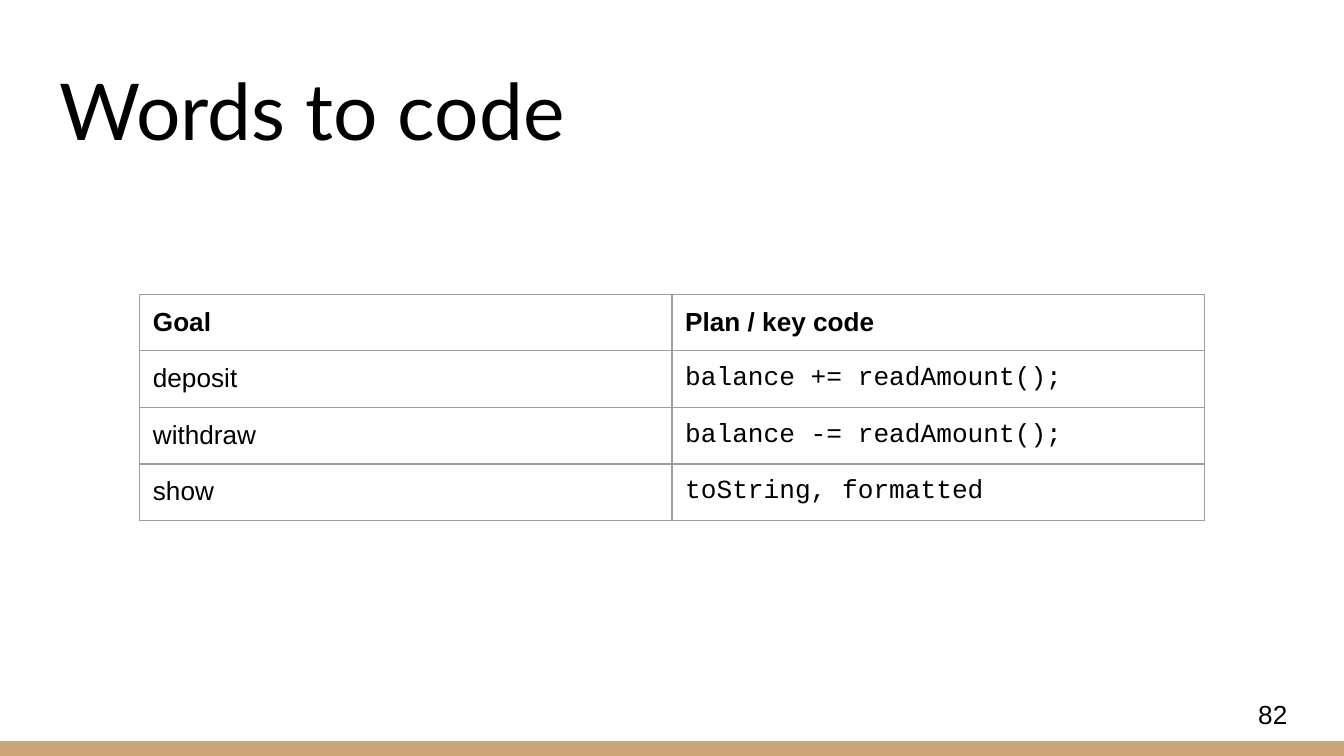
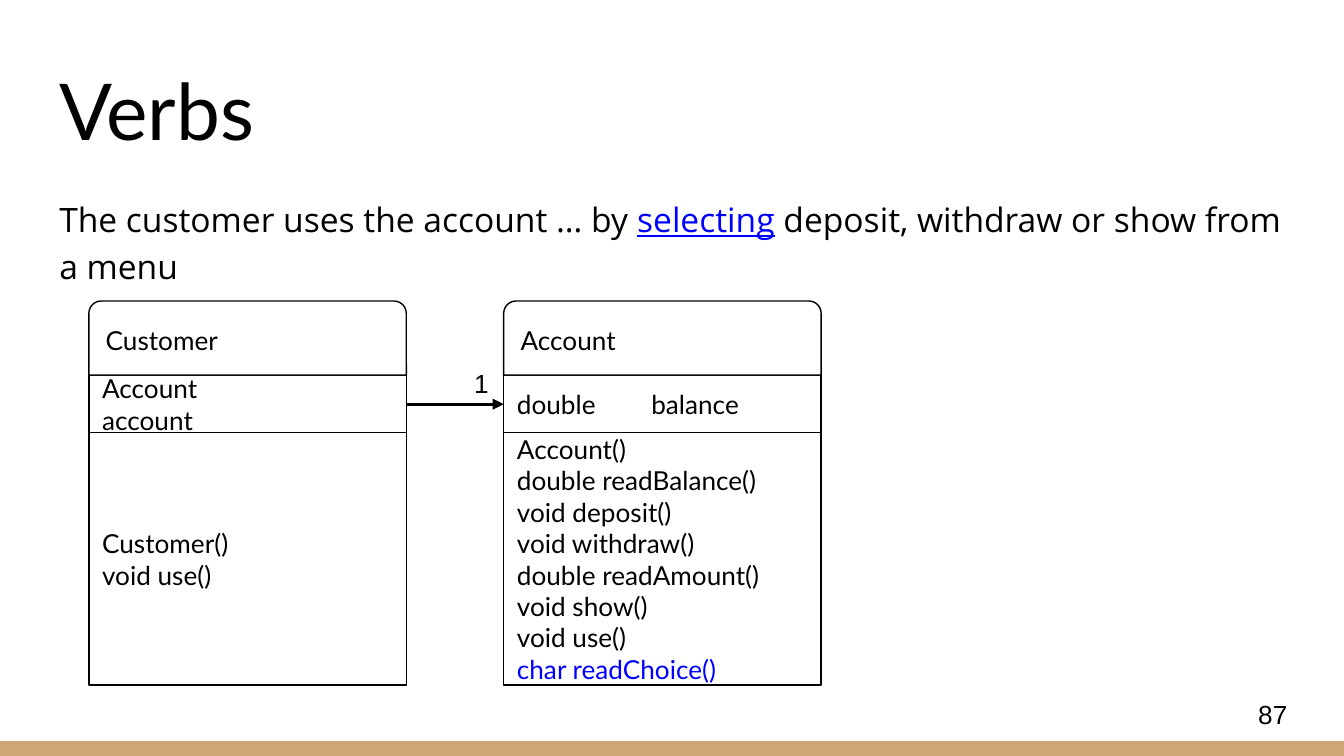
"""Build two slides that turn verbs and goals into class methods and code."""
from dataclasses import dataclass

from lxml import etree
from pptx import Presentation
from pptx.dml.color import RGBColor
from pptx.enum.shapes import MSO_CONNECTOR, MSO_SHAPE
from pptx.enum.text import MSO_ANCHOR, MSO_AUTO_SIZE, PP_ALIGN
from pptx.oxml import parse_xml
from pptx.oxml.ns import nsdecls, qn
from pptx.util import Cm, Pt

RECTANGLE = MSO_SHAPE.RECTANGLE
ROUND_TOP = MSO_SHAPE.ROUND_2_SAME_RECTANGLE
STRAIGHT = MSO_CONNECTOR.STRAIGHT
TOP, MIDDLE, BOTTOM = MSO_ANCHOR.TOP, MSO_ANCHOR.MIDDLE, MSO_ANCHOR.BOTTOM
LEFT = PP_ALIGN.LEFT
NO_AUTOFIT = MSO_AUTO_SIZE.NONE


@dataclass(frozen=True)
class Theme:
    ink: str = "000000"
    paper: str = "FFFFFF"
    band: str = "CCA677"
    highlight: str = "0000FF"
    grid: str = "9E9E9E"
    heading_font: str = "Lato"
    body_font: str = "Open Sans"
    plain_font: str = "Arial"
    code_font: str = "Courier New"
    title_size: int = 42
    body_size: int = 18
    label_size: int = 14
    thin: float = 0.75
    thick: float = 1.5


theme = Theme()
INSET = Cm(0.25)


def write(frame, paragraphs, font=theme.plain_font, size=theme.label_size, bold=False,
          anchor=None, line_spacing=1.0, space_after=0):
    """Fill a text frame; a paragraph is a list of (text, is_highlighted, is_underlined)."""
    if anchor is not None:
        frame.word_wrap = True
        frame.auto_size = NO_AUTOFIT
        frame.vertical_anchor = anchor
        frame.margin_left = frame.margin_right = INSET
        frame.margin_top = frame.margin_bottom = INSET
    for index, runs in enumerate(paragraphs):
        paragraph = frame.add_paragraph() if index else frame.paragraphs[0]
        paragraph.alignment = LEFT
        paragraph.line_spacing = line_spacing
        paragraph.space_before = Pt(0)
        paragraph.space_after = Pt(space_after)
        for text, highlighted, underlined in runs:
            run = paragraph.add_run()
            run.text = text
            run.font.name = font
            run.font.size = Pt(size)
            run.font.bold = bold
            run.font.underline = underlined
            color = theme.highlight if highlighted else theme.ink
            run.font.color.rgb = RGBColor.from_string(color)


def add_box(slide, kind, left, top, width, height, fill, line=None):
    """Add a flat preset shape, with measures in centimetres."""
    shape = slide.shapes.add_shape(kind, Cm(left), Cm(top), Cm(width), Cm(height))
    shape.shadow.inherit = False
    shape.fill.solid()
    shape.fill.fore_color.rgb = RGBColor.from_string(fill)
    if line:
        shape.line.color.rgb = RGBColor.from_string(line)
        shape.line.width = Pt(theme.thin)
    else:
        shape.line.fill.background()
    return shape


presentation = Presentation()
presentation.slide_width, presentation.slide_height = Cm(25.4), Cm(14.29)
slides = []
for title, number, layout in (("Words to code", "82", 5), ("Verbs", "87", 1)):
    slide = presentation.slides.add_slide(presentation.slide_layouts[layout])
    add_box(slide, RECTANGLE, 0, 14.01, 25.4, 0.28, theme.band)
    heading = slide.shapes.title
    heading.left, heading.top, heading.width, heading.height = Cm(0.87), Cm(0.9), Cm(23.67), Cm(2.31)
    write(heading.text_frame, [[(title, False, False)]], font=theme.heading_font,
          size=theme.title_size, anchor=BOTTOM)
    page_number = slide.shapes.add_textbox(Cm(23.53), Cm(12.96), Cm(1.52), Cm(1.09))
    write(page_number.text_frame, [[(number, False, False)]], anchor=MIDDLE)
    slides.append(slide)
goals_slide, verbs_slide = slides

goals = (
    ("Goal", "Plan / key code"),
    ("deposit", "balance += readAmount();"),
    ("withdraw", "balance -= readAmount();"),
    ("show", "toString, formatted"),
)
table = goals_slide.shapes.add_table(len(goals), 2, Cm(2.64), Cm(5.56), Cm(20.12), Cm(4.28)).table
for row_index, row in enumerate(goals):
    table.rows[row_index].height = Cm(1.07)
    for column_index, text in enumerate(row):
        cell = table.cell(row_index, column_index)
        cell.margin_left = cell.margin_right = cell.margin_top = cell.margin_bottom = INSET
        is_header = row_index == 0
        is_code = column_index == 1 and not is_header
        write(cell.text_frame, [[(text, False, False)]], bold=is_header,
              font=theme.code_font if is_code else theme.plain_font)
        properties = cell._tc.get_or_add_tcPr()
        for side in ("lnL", "lnR", "lnT", "lnB"):
            properties.append(parse_xml(
                f'<a:{side} {nsdecls("a")} w="{Pt(theme.thin)}"><a:solidFill>'
                f'<a:srgbClr val="{theme.grid}"/></a:solidFill></a:{side}>'))
        cell.fill.solid()
        cell.fill.fore_color.rgb = RGBColor.from_string(theme.paper)

body = verbs_slide.placeholders[1]
body.left, body.top, body.width, body.height = Cm(0.87), Cm(3.4), Cm(23.67), Cm(9.32)
sentence = [
    ("The customer uses the account … by ", False, False),
    ("selecting", True, True),
    (" deposit, withdraw or show from a menu", False, False),
]
write(body.text_frame, [sentence], font=theme.body_font, size=theme.body_size,
      anchor=TOP, line_spacing=1.15, space_after=16)
body_properties = body.text_frame.paragraphs[0]._p.get_or_add_pPr()
body_properties.set("marL", "0")
body_properties.set("indent", "0")
etree.SubElement(body_properties, qn("a:buNone"))

CLASS_WIDTH = 6
classes = (
    (1.68, "Customer", "Account\t\taccount", ("Customer()", "void use()")),
    (9.52, "Account", "double\tbalance",
     ("Account()", "double readBalance()", "void deposit()", "void withdraw()",
      "double readAmount()", "void show()", "void use()", "char readChoice()")),
)
for left, name, field, methods in classes:
    sections = (
        (RECTANGLE, 7.09, 1.09, (field,)),
        (ROUND_TOP, 5.69, 1.4, (name,)),
        (RECTANGLE, 8.18, 4.77, methods),
    )
    for kind, top, height, lines in sections:
        section = add_box(verbs_slide, kind, left, top, CLASS_WIDTH, height, theme.paper, theme.ink)
        write(section.text_frame, [[(line, line == "char readChoice()", False)] for line in lines],
              font=theme.heading_font, anchor=MIDDLE)

arrow = verbs_slide.shapes.add_connector(STRAIGHT, Cm(7.69), Cm(7.64), Cm(9.52), Cm(7.64))
arrow.line.color.rgb = RGBColor.from_string(theme.ink)
arrow.line.width = Pt(theme.thick)
etree.SubElement(arrow.line._get_or_add_ln(), qn("a:tailEnd"), type="triangle")
etree.SubElement(arrow._element.spPr, qn("a:effectLst"))
multiplicity = verbs_slide.shapes.add_textbox(Cm(8.71), Cm(6.7), Cm(0.82), Cm(0.64))
write(multiplicity.text_frame, [[("1", False, False)]], anchor=TOP)

presentation.save("out.pptx")
